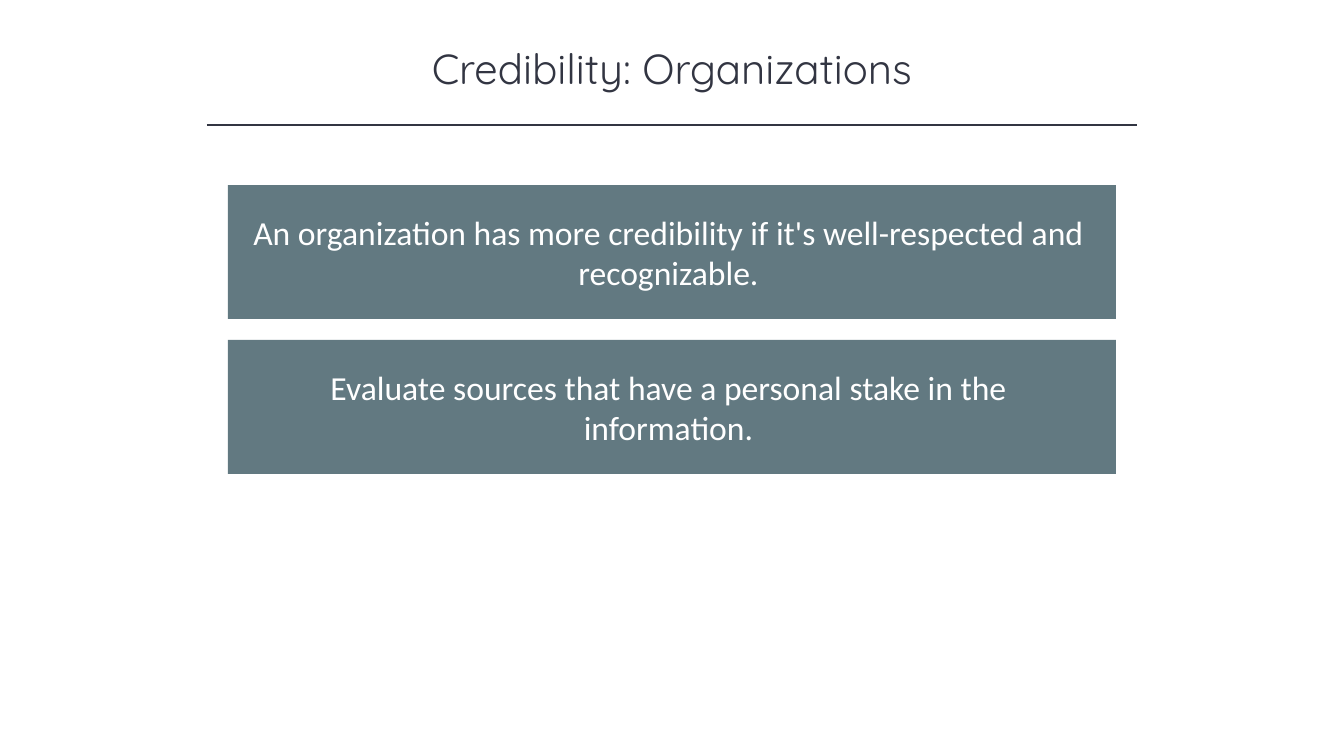
from pptx import Presentation
from pptx import util as u
from pptx.dml.color import RGBColor
from pptx.enum import shapes, text
from pptx.oxml.ns import qn
from lxml import etree

COLORS = {"ink": "323542", "panel": "627981", "white": "FFFFFF"}


def px(n):
    return u.Emu(round(n * 914400 / 100.8))


def write(frame, words, font, size, color):
    frame.word_wrap = True
    frame.vertical_anchor = text.MSO_ANCHOR.MIDDLE
    frame.text = words
    paragraph = frame.paragraphs[0]
    paragraph.alignment = text.PP_ALIGN.CENTER
    run_font = paragraph.runs[0].font
    run_font.name = font
    run_font.size = u.Pt(size)
    run_font.color.rgb = RGBColor.from_string(COLORS[color])


prs = Presentation()
prs.slide_width, prs.slide_height = px(1344), px(756)
slide = prs.slides.add_slide(prs.slide_layouts[5])

# Title
title = slide.shapes.title
title.left, title.top, title.width, title.height = px(168), px(37), px(1008), px(61)
write(title.text_frame, "Credibility: Organizations", "Quicksand", 30, "ink")
title.text_frame.auto_size = text.MSO_AUTO_SIZE.NONE

# Rule under the title
rule = slide.shapes.add_connector(
    shapes.MSO_CONNECTOR.STRAIGHT, px(207), px(125), px(1137), px(125))
rule.line.color.rgb = RGBColor.from_string(COLORS["ink"])
rule.line.width = u.Pt(1)
etree.SubElement(rule._element.spPr, qn("a:effectLst"))

# Advice panels
advice = [
    "An organization has more credibility if it's well-respected and recognizable.",
    "Evaluate sources that have a personal stake in the information.",
]
for row, words in enumerate(advice):
    panel = slide.shapes.add_shape(
        shapes.MSO_SHAPE.RECTANGLE, px(228), px(185 + 155 * row), px(888), px(134))
    panel.shadow.inherit = False
    panel.fill.solid()
    panel.fill.fore_color.rgb = RGBColor.from_string(COLORS["panel"])
    panel.line.fill.background()
    panel.text_frame.margin_left, panel.text_frame.margin_right = px(20), px(27)
    write(panel.text_frame, words, "Calibri", 24, "white")

prs.save("out.pptx")
